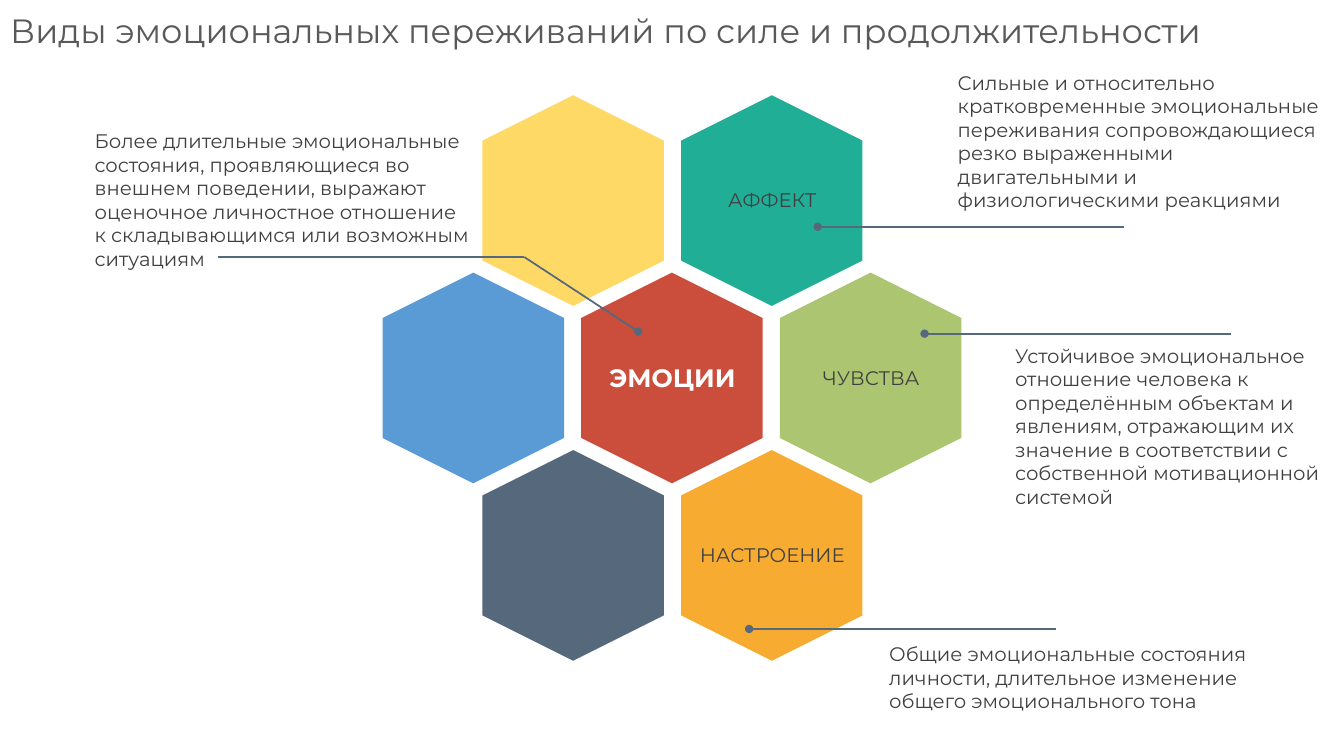
from dataclasses import dataclass
from itertools import pairwise

from lxml import etree
from pptx import Presentation
from pptx import util as u
from pptx.dml.color import RGBColor
from pptx.enum import shapes, text
from pptx.oxml.ns import qn


@dataclass(frozen=True)
class Theme:
    font: str = "Montserrat"
    title: str = "595959"
    body: str = "404040"
    white: str = "FFFFFF"
    line: str = "55687C"
    red: str = "CB4D3C"
    green: str = "ABC570"
    blue: str = "5B9BD5"
    teal: str = "20AE97"
    yellow: str = "FFD966"
    orange: str = "F7AB31"
    slate: str = "55687C"
    title_size: int = 24
    core_size: int = 18
    body_size: int = 14
    line_width: float = 1.25


T = Theme()
PX = 9144
HEX_W, HEX_H = 209, 180
STEP_X, STEP_Y = 197, 176
LABEL_INSET = 15

HEXAGONS = [
    (0, 0, T.red, "ЭМОЦИИ"),
    (2, 0, T.green, "ЧУВСТВА"),
    (-2, 0, T.blue, ""),
    (1, -1, T.teal, "АФФЕКТ"),
    (-1, -1, T.yellow, ""),
    (1, 1, T.orange, "НАСТРОЕНИЕ"),
    (-1, 1, T.slate, ""),
]

CALLOUTS = [
    ((84, 123, 394, 151),
     "Более длительные эмоциональные состояния, проявляющиеся во внешнем поведении, "
     "выражают оценочное личностное отношение к складывающимся или возможным ситуациям",
     [(549, 206), (436, 132), (132, 132)]),
    ((940, 65, 394, 151),
     "Сильные и относительно кратковременные эмоциональные переживания сопровождающиеся "
     "резко выраженными двигательными и физиологическими реакциями",
     [(-129, 160), (175, 160)]),
    ((872, 632, 394, 81),
     "Общие эмоциональные состояния личности, длительное изменение общего эмоционального тона",
     [(-129, -8), (175, -8)]),
    ((997, 336, 336, 175),
     "Устойчивое эмоциональное отношение человека к определённым объектам и явлениям, "
     "отражающим их значение в соответствии с собственной мотивационной системой",
     [(-80, -5), (224, -5)]),
]


def px(*values):
    return [u.Emu(v * PX) for v in values]


def write(tf, content, size, color, align=text.PP_ALIGN.LEFT, bold=False):
    tf.word_wrap = True
    p = tf.paragraphs[0]
    p.alignment = align
    r = p.add_run()
    r.text = content
    r.font.name = T.font
    r.font.size = u.Pt(size)
    r.font.bold = bold
    r.font.color.rgb = RGBColor.from_string(color)


def add_text(s, box, *args, **kwargs):
    tf = s.shapes.add_textbox(*px(*box)).text_frame
    write(tf, *args, **kwargs)
    tf.auto_size = text.MSO_AUTO_SIZE.SHAPE_TO_FIT_TEXT


def add_title(s, box, content):
    sp = s.shapes.title
    sp.left, sp.top, sp.width, sp.height = px(*box)
    tf = sp.text_frame
    write(tf, content, T.title_size, T.title)
    tf.auto_size = text.MSO_AUTO_SIZE.NONE
    tf.vertical_anchor = text.MSO_ANCHOR.MIDDLE


def add_honeycomb(s, box):
    left, top, width, height = box
    core_x = left + (width - HEX_W) // 2
    core_y = top + (height - HEX_H) // 2
    cells = [(core_x + (col * STEP_X + 1) // 2, core_y + row * STEP_Y, color, label)
             for col, row, color, label in HEXAGONS]
    for x, y, color, label in cells:
        sp = s.shapes.add_shape(shapes.MSO_SHAPE.HEXAGON, *px(x, y, HEX_W, HEX_H))
        sp.rotation = 270
        sp.shadow.inherit = False
        sp.fill.solid()
        sp.fill.fore_color.rgb = RGBColor.from_string(color)
        sp.line.fill.background()
    for x, y, color, label in cells:
        if label:
            core = color == T.red
            h = 40 if core else 34
            add_text(s, (x + LABEL_INSET, y + (HEX_H - h) // 2, HEX_H, h), label,
                     T.core_size if core else T.body_size,
                     T.white if core else T.body,
                     align=text.PP_ALIGN.CENTER, bold=core)


def add_leader(s, points):
    for i, (start, end) in enumerate(pairwise(points)):
        cxn = s.shapes.add_connector(shapes.MSO_CONNECTOR.STRAIGHT, *px(*start, *end))
        cxn.line.width = u.Pt(T.line_width)
        cxn.line.color.rgb = RGBColor.from_string(T.line)
        if i == 0:
            etree.SubElement(cxn.line._get_or_add_ln(), qn("a:headEnd"), type="oval")
        etree.SubElement(cxn._element.spPr, qn("a:effectLst"))


def add_callout(s, box, content, offsets):
    left, top, _, _ = box
    add_text(s, box, content, T.body_size, T.body)
    add_leader(s, [(left + dx, top + dy) for dx, dy in offsets])


def main():
    prs = Presentation()
    prs.slide_width, prs.slide_height = px(1333, 750)
    s = prs.slides.add_slide(prs.slide_layouts[5])
    add_title(s, (0, 0, 1333, 60),
              "Виды эмоциональных переживаний по силе и продолжительности")
    add_honeycomb(s, (379, 94, 575, 562))
    for callout in CALLOUTS:
        add_callout(s, *callout)
    prs.save("out.pptx")


if __name__ == "__main__":
    main()
